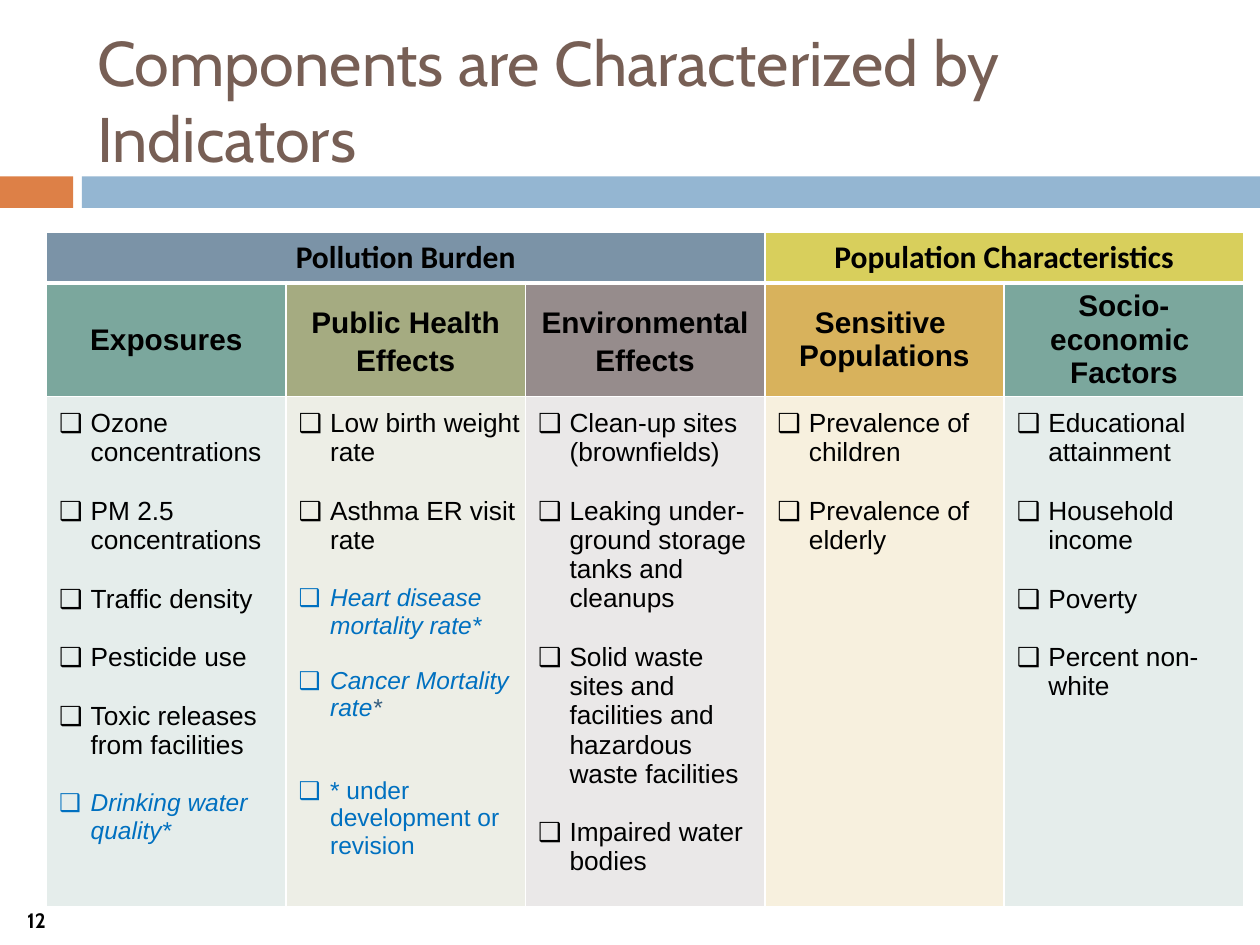
from dataclasses import dataclass

from lxml.etree import SubElement
from pptx import Presentation
from pptx.dml.color import RGBColor
from pptx.enum.shapes import MSO_SHAPE
from pptx.enum.text import MSO_ANCHOR, MSO_AUTO_SIZE, PP_ALIGN
from pptx.oxml.ns import qn
from pptx.util import Inches, Pt

BLACK = RGBColor(0x00, 0x00, 0x00)
WHITE = RGBColor(0xFF, 0xFF, 0xFF)
BROWN = RGBColor(0x77, 0x5F, 0x55)
ORANGE = RGBColor(0xDD, 0x80, 0x47)
SKY = RGBColor(0x94, 0xB6, 0xD2)
SLATE = RGBColor(0x7B, 0x93, 0xA7)
YELLOW = RGBColor(0xD8, 0xCF, 0x5C)
TEAL = RGBColor(0x7B, 0xA7, 0x9D)
OLIVE = RGBColor(0xA5, 0xAB, 0x81)
TAUPE = RGBColor(0x96, 0x8C, 0x8C)
GOLD = RGBColor(0xD8, 0xB2, 0x5C)
PALE_TEAL = RGBColor(0xE5, 0xED, 0xEB)
PALE_OLIVE = RGBColor(0xED, 0xEE, 0xE6)
PALE_TAUPE = RGBColor(0xEA, 0xE8, 0xE8)
PALE_GOLD = RGBColor(0xF7, 0xF0, 0xDE)
BLUE = RGBColor(0x00, 0x70, 0xC0)
NAVY = RGBColor(0x35, 0x5D, 0x7E)

LINE_HEIGHT = 1.12  # Arial line height as a share of the text size
HANGING = Inches(0.25)
ROW_HEIGHTS = (0.4, 0.9, 4.05)


@dataclass
class Indicator:
    text: str
    size: int = 15
    color: RGBColor = BLACK
    italic: bool = False
    blank_lines: int = 1
    mark: str = ""


def planned(text, **options):
    """An indicator still under development or revision."""
    return Indicator(text, 14, BLUE, **{"italic": True, **options})


# heading, columns spanned, fill
GROUPS = [("Pollution Burden", 3, SLATE), ("Population Characteristics", 2, YELLOW)]

# heading, line spacing, heading fill, body fill, indicators
COMPONENTS = [
    ("Exposures", 1, TEAL, PALE_TEAL, [
        Indicator("Ozone concentrations"),
        Indicator("PM 2.5 concentrations"),
        Indicator("Traffic density"),
        Indicator("Pesticide use"),
        Indicator("Toxic releases from facilities"),
        planned("Drinking water quality*"),
    ]),
    ("Public Health\nEffects", 1.15, OLIVE, PALE_OLIVE, [
        Indicator("Low birth weight rate"),
        Indicator("Asthma ER visit rate"),
        planned("Heart disease mortality rate*"),
        planned("Cancer Mortality rate", mark="*", blank_lines=2),
        planned("* under development or revision", italic=False),
    ]),
    ("Environmental\nEffects", 1.15, TAUPE, PALE_TAUPE, [
        Indicator("Clean-up sites (brownfields)"),
        Indicator("Leaking under-ground storage tanks and cleanups"),
        Indicator("Solid waste sites and facilities and hazardous waste facilities"),
        Indicator("Impaired water bodies"),
    ]),
    ("Sensitive \vPopulations", 1, GOLD, PALE_GOLD, [
        Indicator("Prevalence of children"),
        Indicator("Prevalence of elderly"),
    ]),
    ("Socio-\neconomic \vFactors", 1, TEAL, PALE_TEAL, [
        Indicator("Educational attainment"),
        Indicator("Household income"),
        Indicator("Poverty"),
        Indicator("Percent non-white"),
    ]),
]


def style_run(run, font_name, size, color, bold=False, italic=False):
    font = run.font
    font.name, font.size, font.bold, font.italic = font_name, Pt(size), bold, italic
    font.color.rgb = color


def style_cell(cell, fill, margins, bottom_width=1):
    """Fill the cell, set its margins and draw white borders."""
    cell.margin_left, cell.margin_top, cell.margin_right, cell.margin_bottom = map(Inches, margins)
    properties = cell._tc.get_or_add_tcPr()
    for side, width in (("L", 1), ("R", 1), ("T", 1), ("B", bottom_width)):
        border = SubElement(properties, qn(f"a:ln{side}"), w=str(Pt(width)))
        color = SubElement(SubElement(border, qn("a:solidFill")), qn("a:srgbClr"))
        color.set("val", str(WHITE))
    cell.fill.solid()
    cell.fill.fore_color.rgb = fill


def fill_heading(cell, heading, fill, font_name, size, spacing=1, bottom_width=1):
    style_cell(cell, fill, (0.05,) * 4, bottom_width)
    cell.vertical_anchor = MSO_ANCHOR.MIDDLE
    cell.text_frame.text = heading
    for paragraph in cell.text_frame.paragraphs:
        paragraph.alignment = PP_ALIGN.CENTER
        paragraph.line_spacing = float(spacing)
        for run in paragraph.runs:
            style_run(run, font_name, size, BLACK, bold=True)


def add_checkbox(paragraph):
    properties = paragraph._p.get_or_add_pPr()
    properties.set("marL", str(HANGING))
    properties.set("indent", str(-HANGING))
    SubElement(properties, qn("a:buFont"), typeface="Arial")
    SubElement(properties, qn("a:buChar"), char="❑")


def fill_indicators(cell, indicators, fill):
    style_cell(cell, fill, (0.1, 0.1, 0, 0.05))
    cell.text_frame.text = "\n".join(indicator.text for indicator in indicators)
    for paragraph, indicator in zip(cell.text_frame.paragraphs, indicators):
        if indicator is not indicators[-1]:
            paragraph.space_after = Pt(round(indicator.size * LINE_HEIGHT * indicator.blank_lines, 1))
        add_checkbox(paragraph)
        style_run(paragraph.runs[0], "Arial", indicator.size, indicator.color, italic=indicator.italic)
        if indicator.mark:
            mark = paragraph.add_run()
            mark.text = indicator.mark
            style_run(mark, "Arial", indicator.size, NAVY, italic=indicator.italic)


def add_indicator_table(slide, left, top, width):
    frame = slide.shapes.add_table(len(ROW_HEIGHTS), len(COMPONENTS), left, top, width,
                                   Inches(sum(ROW_HEIGHTS)))
    table = frame.table
    table.first_row = table.horz_banding = False
    for row, height in zip(table.rows, ROW_HEIGHTS):
        row.height = Inches(height)

    first = 0
    for heading, span, fill in GROUPS:
        cell = table.cell(0, first)
        cell.merge(table.cell(0, first + span - 1))
        fill_heading(cell, heading, fill, "Calibri", 18, bottom_width=3)
        first += span

    for column, (heading, spacing, fill, pale, indicators) in enumerate(COMPONENTS):
        fill_heading(table.cell(1, column), heading, fill, "Arial", 17, spacing)
        fill_indicators(table.cell(2, column), indicators, pale)


def add_band(slide, left, top, width, height, color):
    band = slide.shapes.add_shape(MSO_SHAPE.RECTANGLE, left, top, width, height)
    band.shadow.inherit = False
    band.fill.solid()
    band.fill.fore_color.rgb = color
    band.line.fill.background()


def place_title(slide, left, top, width, height):
    title = slide.shapes.title
    title.left, title.top, title.width, title.height = left, top, width, height
    frame = title.text_frame
    frame.text = "Components are Characterized by Indicators"
    frame.word_wrap = True
    frame.auto_size = MSO_AUTO_SIZE.NONE
    frame.vertical_anchor = MSO_ANCHOR.MIDDLE
    frame.paragraphs[0].alignment = PP_ALIGN.LEFT
    style_run(frame.paragraphs[0].runs[0], "Cabin", 36, BROWN)


def add_page_number(slide, left, top, width, height):
    frame = slide.shapes.add_textbox(left, top, width, height).text_frame
    frame.text = "12"
    frame.word_wrap = True
    frame.vertical_anchor = MSO_ANCHOR.MIDDLE
    frame.paragraphs[0].alignment = PP_ALIGN.CENTER
    style_run(frame.paragraphs[0].runs[0], "Cabin", 11.9, BLACK, bold=True)


def main():
    deck = Presentation()
    deck.slide_width, deck.slide_height = Inches(10), Inches(7.5)
    slide = deck.slides.add_slide(deck.slide_layouts[5])
    margin, content_left = Inches(0.58), Inches(0.65)
    band_top, band_height = Inches(1.4), Inches(0.25)
    add_band(slide, 0, band_top, margin, band_height, ORANGE)
    add_band(slide, content_left, band_top, deck.slide_width - content_left, band_height, SKY)
    place_title(slide, Inches(0.67), Inches(0.25), Inches(9.33), Inches(1.08))
    add_indicator_table(slide, Inches(0.37), Inches(1.84), Inches(9.5))
    add_page_number(slide, 0, Inches(7.17), margin, Inches(0.27))
    deck.save("out.pptx")


if __name__ == "__main__":
    main()
